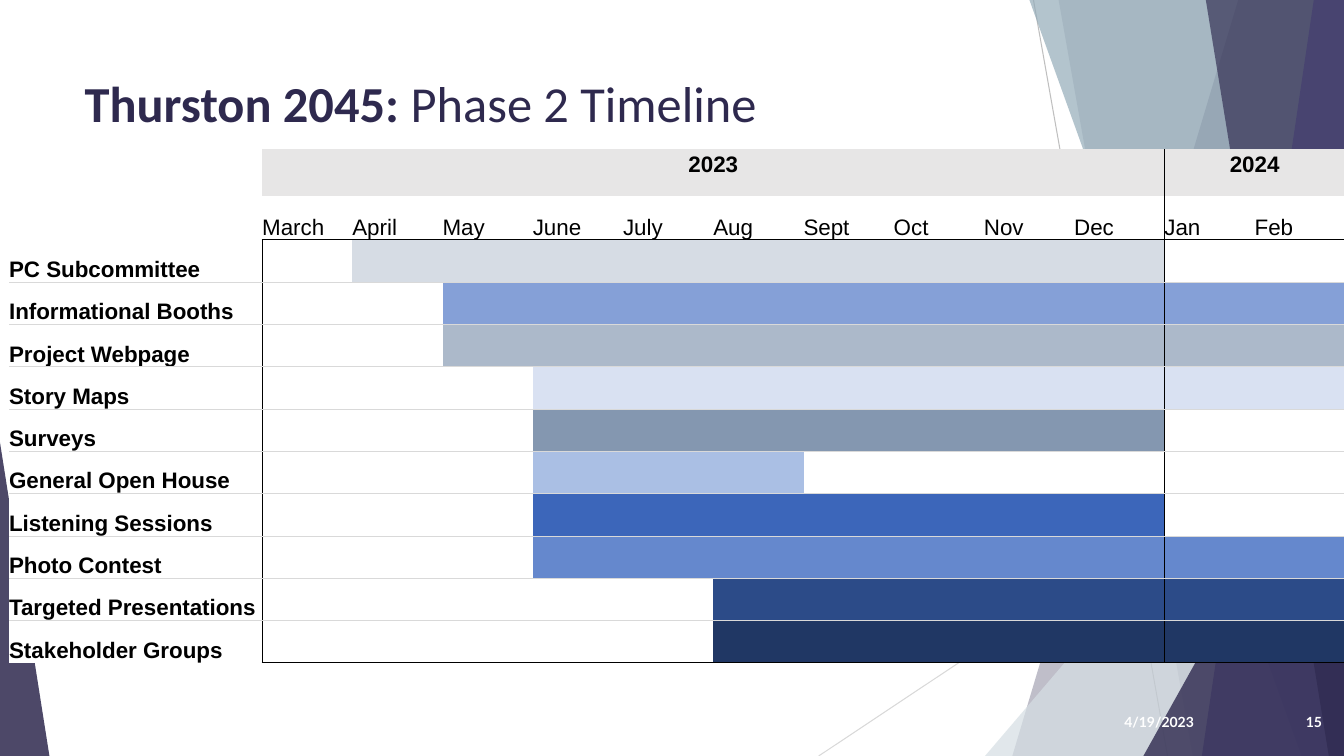
from lxml import etree
from pptx import Presentation
from pptx.dml.color import RGBColor
from pptx.enum.shapes import MSO_CONNECTOR, MSO_SHAPE
from pptx.enum.text import MSO_ANCHOR, PP_ALIGN
from pptx.oxml.ns import qn
from pptx.util import Inches, Pt

STRAIGHT = MSO_CONNECTOR.STRAIGHT
TRIANGLE = MSO_SHAPE.ISOSCELES_TRIANGLE
TOP, MIDDLE, BOTTOM = MSO_ANCHOR.TOP, MSO_ANCHOR.MIDDLE, MSO_ANCHOR.BOTTOM
LEFT, CENTER, RIGHT = PP_ALIGN.LEFT, PP_ALIGN.CENTER, PP_ALIGN.RIGHT

INDIGO = RGBColor(0x2E, 0x29, 0x4E)
VIOLET = RGBColor(0x6F, 0x65, 0xAE)
STEEL = RGBColor(0x93, 0xAB, 0xB8)
MIST = RGBColor(0xD6, 0xDF, 0xE4)
WHITE = RGBColor(0xFF, 0xFF, 0xFF)
BLACK = RGBColor(0x00, 0x00, 0x00)
RULE_GREY = RGBColor(0xD9, 0xD9, 0xD9)
LINE_GREY = RGBColor(0xBF, 0xBF, 0xBF)
HEADER_GREY = RGBColor(0xE7, 0xE6, 0xE6)

WIDTH, HEIGHT = 13.33, 7.5
MONTHS = "March April May June July Aug Sept Oct Nov Dec Jan Feb".split()
YEARS = [("2023", 1, 10), ("2024", 11, 12)]
# Activity, first month, last month, bar colour
ACTIVITIES = [
    ("PC Subcommittee", "April", "Dec", RGBColor(0xD6, 0xDC, 0xE4)),
    ("Informational Booths", "May", "Feb", RGBColor(0x85, 0xA0, 0xD7)),
    ("Project Webpage", "May", "Feb", RGBColor(0xAC, 0xB9, 0xCA)),
    ("Story Maps", "June", "Feb", RGBColor(0xD9, 0xE1, 0xF2)),
    ("Surveys", "June", "Dec", RGBColor(0x84, 0x97, 0xB0)),
    ("General Open House", "June", "Aug", RGBColor(0xAA, 0xBF, 0xE4)),
    ("Listening Sessions", "June", "Dec", RGBColor(0x3C, 0x66, 0xBA)),
    ("Photo Contest", "June", "Feb", RGBColor(0x65, 0x88, 0xCD)),
    ("Targeted Presentations", "Aug", "Feb", RGBColor(0x2C, 0x4B, 0x88)),
    ("Stakeholder Groups", "Aug", "Feb", RGBColor(0x20, 0x37, 0x64)),
]


def write_run(paragraph, text, **formats):
    run = paragraph.add_run()
    run.text = text
    run.font.color.rgb = formats.pop("color")
    for name, value in formats.items():
        setattr(run.font, name, value)


def add_border(cell, side, border):
    """Append one cell edge; border is (colour, points) or None for no line."""
    properties = cell._tc.get_or_add_tcPr()
    line = etree.SubElement(properties, qn(f"a:ln{side}"))
    if border is None:
        line.set("w", "0")
        etree.SubElement(line, qn("a:noFill"))
        return
    color, points = border
    line.set("w", str(Pt(points)))
    fill = etree.SubElement(line, qn("a:solidFill"))
    etree.SubElement(fill, qn("a:srgbClr"), val=str(color))


presentation = Presentation()
presentation.slide_width = Inches(WIDTH)
presentation.slide_height = Inches(HEIGHT)
slide = presentation.slides.add_slide(presentation.slide_layouts[5])

# Background lines
for start, end, color in [
    ((10.25, 0), (11.58, HEIGHT), LINE_GREY),
    ((WIDTH, 4.03), (8.12, HEIGHT), RULE_GREY),
]:
    connector = slide.shapes.add_connector(STRAIGHT, *map(Inches, start + end))
    connector.line.color.rgb = color
    connector.line.width = Pt(0.75)
    etree.SubElement(connector._element.spPr, qn("a:effectLst"))

# Facets: a band is (top x, bottom x) and runs to the right edge;
# a peak is (left, top, width, apex share) and stands on the bottom edge
for facet, color, opacity in [
    ((12.28, 10.04), INDIGO, 30),
    ((10.5, 11.83), INDIGO, 20),
    ((9.77, 3.33, 3.56, 1), MIST, 72),
    ((10.21, 12.91), STEEL, 70),
    ((13.03, 11.92), VIOLET, 70),
    ((11.96, 13.18), INDIGO, 65),
    ((11.34, 3.93, 1.99, 1), INDIGO, 80),
    ((0, 4.39, 0.49, 0), INDIGO, 85),
]:
    if len(facet) == 2:
        top_x, bottom_x = facet
        builder = slide.shapes.build_freeform(Inches(top_x), 0)
        corners = [(WIDTH, 0), (WIDTH, HEIGHT), (bottom_x, HEIGHT)]
        builder.add_line_segments([(Inches(x), Inches(y)) for x, y in corners])
        shape = builder.convert_to_shape()
    else:
        left, top, width, apex = facet
        shape = slide.shapes.add_shape(
            TRIANGLE, *map(Inches, (left, top, width, HEIGHT - top)))
        shape.adjustments[0] = apex
    shape.shadow.inherit = False
    shape.line.fill.background()
    shape.fill.solid()
    shape.fill.fore_color.rgb = color
    color_element = shape._element.spPr.find(qn("a:solidFill"))[0]
    etree.SubElement(color_element, qn("a:alpha"), val=str(opacity * 1000))

# Title
title = slide.shapes.title
title.left, title.top, title.width, title.height = map(Inches, (0.74, 0.67, 9.4, 1.44))
title.text_frame.vertical_anchor = TOP
paragraph = title.text_frame.paragraphs[0]
paragraph.alignment = LEFT
for text, bold in [("Thurston 2045: ", True), ("Phase 2 Timeline", False)]:
    write_run(paragraph, text, name="Calibri", size=Pt(36), bold=bold, color=INDIGO)

# Slide number and date
for text, left, width in [("15", 12.46, 0.75), ("4/19/2023", 10.78, 1.16)]:
    box = slide.shapes.add_textbox(*map(Inches, (left, 6.96, width, 0.4)))
    box.text_frame.word_wrap = True
    box.text_frame.vertical_anchor = MIDDLE
    paragraph = box.text_frame.paragraphs[0]
    paragraph.alignment = RIGHT
    write_run(paragraph, text, name="Lato", size=Pt(10), bold=True, color=WHITE)

# Timeline table
row_heights = [0.46, 0.44] + [0.42] * len(ACTIVITIES)
column_widths = [2.51] + [0.895] * len(MONTHS)
row_count, column_count = len(row_heights), len(column_widths)
frame = slide.shapes.add_table(
    row_count, column_count, Inches(0.09), Inches(1.48),
    Inches(sum(column_widths)), Inches(sum(row_heights)))
table = frame.table
table.first_row = table.horz_banding = False
for row, height in zip(table.rows, row_heights):
    row.height = Inches(height)
for column, width in zip(table.columns, column_widths):
    column.width = Inches(width)

texts, fills = {}, {(0, 0): None}
for year, first, last in YEARS:
    table.cell(0, first).merge(table.cell(0, last))
    texts[0, first] = year
    fills[0, first] = HEADER_GREY
for column, month in enumerate(MONTHS, start=1):
    texts[1, column] = month
for row, (activity, first, last, color) in enumerate(ACTIVITIES, start=2):
    texts[row, 0] = activity
    for column in range(MONTHS.index(first) + 1, MONTHS.index(last) + 2):
        fills[row, column] = color

# Borders by grid line: the year divider, the chart frame and the row rules
year_divider = {11: (BLACK, 1.5)}
chart_sides = {1: (BLACK, 1), column_count: (BLACK, 1), **year_divider}
row_rules = {line: (RULE_GREY, 0.5) for line in range(3, row_count)}
chart_rules = {2: (BLACK, 1), row_count: (BLACK, 1), **row_rules}

for row in range(row_count):
    vertical = chart_sides if row >= 2 else year_divider
    for column in range(column_count):
        cell = table.cell(row, column)
        if cell.is_spanned:
            continue
        horizontal = chart_rules if column else row_rules
        add_border(cell, "L", vertical.get(column))
        add_border(cell, "R", vertical.get(column + cell.span_width))
        add_border(cell, "T", horizontal.get(row))
        add_border(cell, "B", horizontal.get(row + 1))
        fill = fills.get((row, column), WHITE)
        if fill is None:
            cell.fill.background()
        else:
            cell.fill.solid()
            cell.fill.fore_color.rgb = fill
        side_margin, end_margin = (0.05, 0.03) if row == 0 else (0, 0)
        cell.margin_left = cell.margin_right = Inches(side_margin)
        cell.margin_top = cell.margin_bottom = Inches(end_margin)
        cell.vertical_anchor = TOP if row == 0 else BOTTOM
        if (row, column) in texts:
            paragraph = cell.text_frame.paragraphs[0]
            paragraph.alignment = CENTER if row == 0 else LEFT
            write_run(paragraph, texts[row, column], name="Arial", size=Pt(16),
                      bold=row != 1, color=BLACK)

presentation.save("out.pptx")
